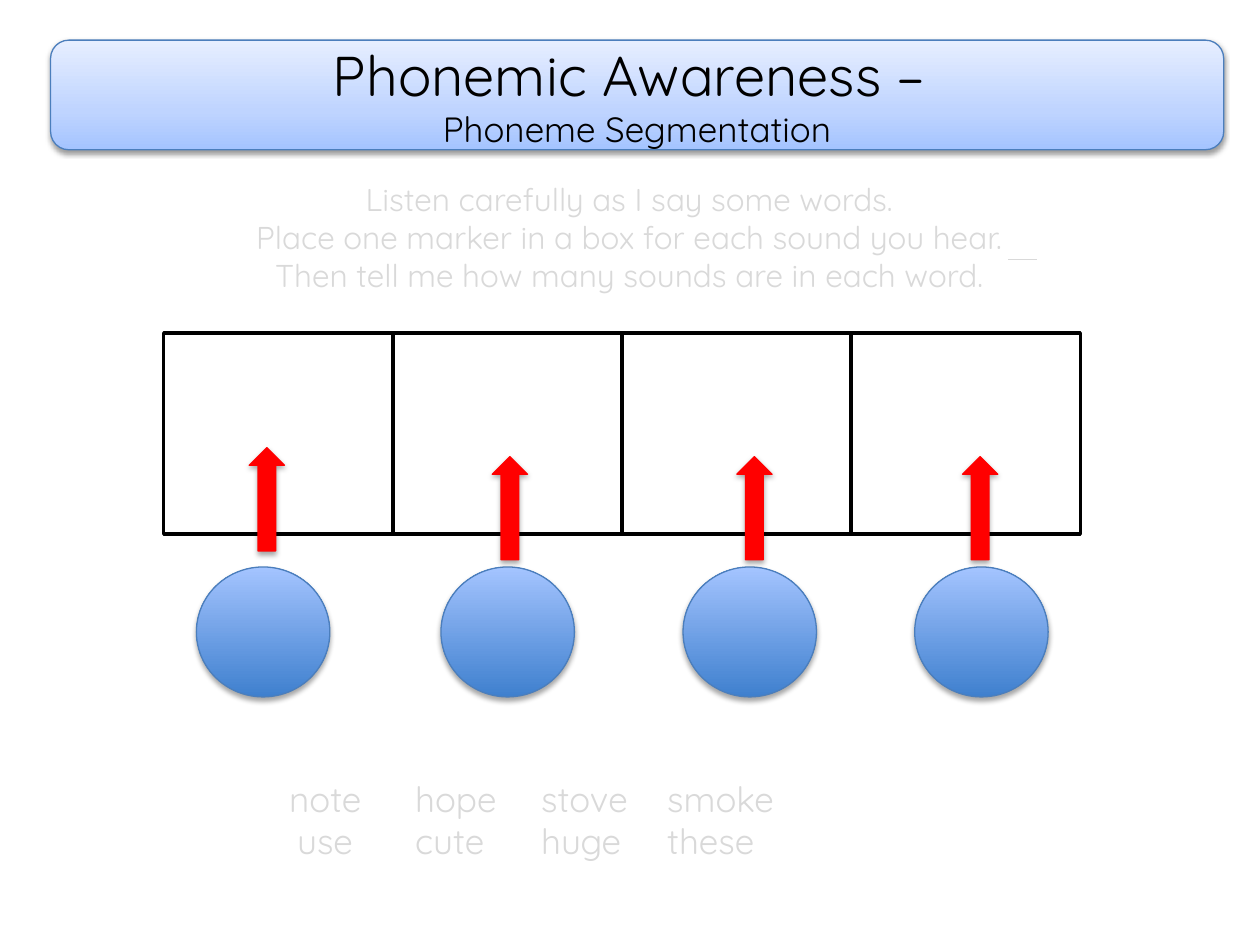
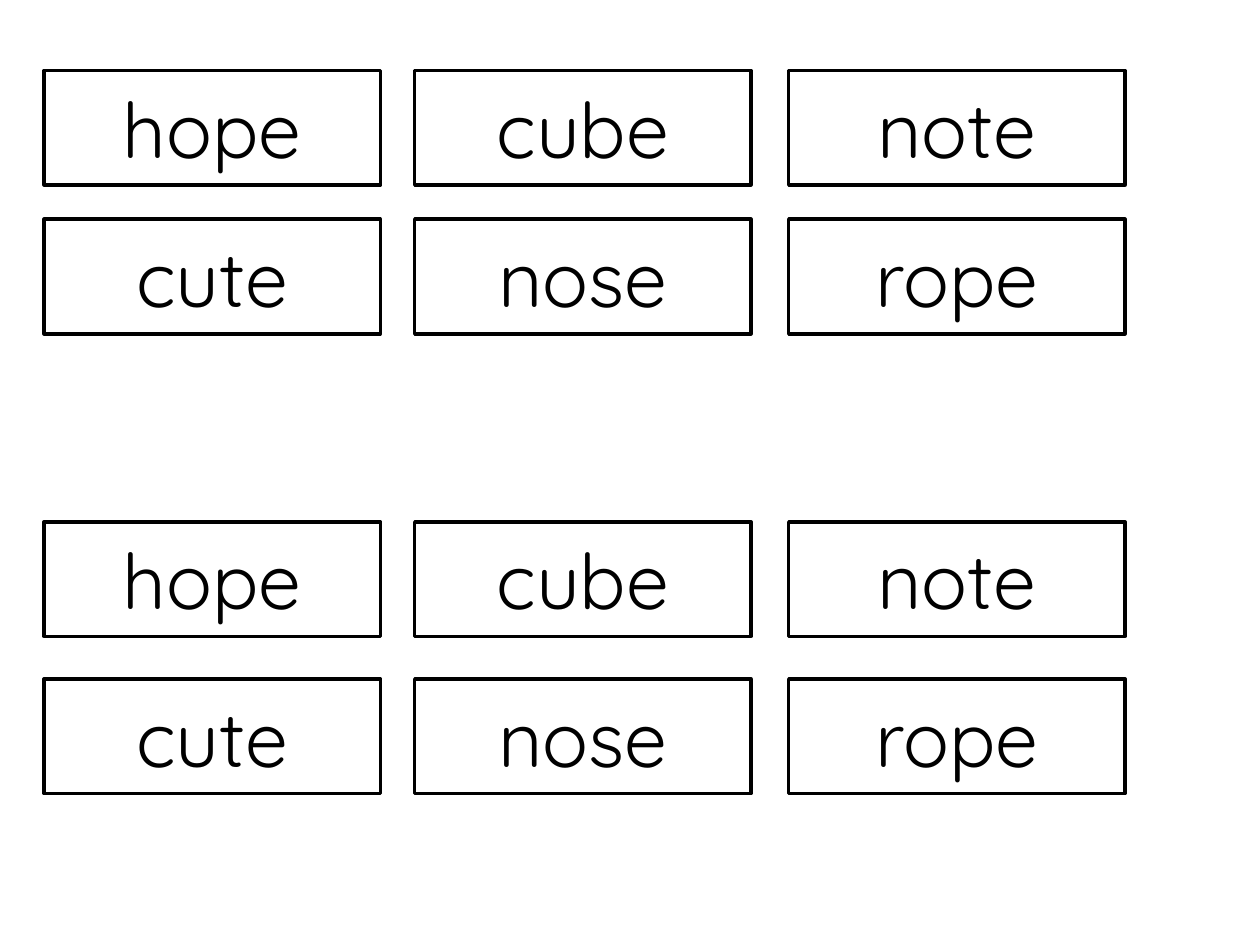
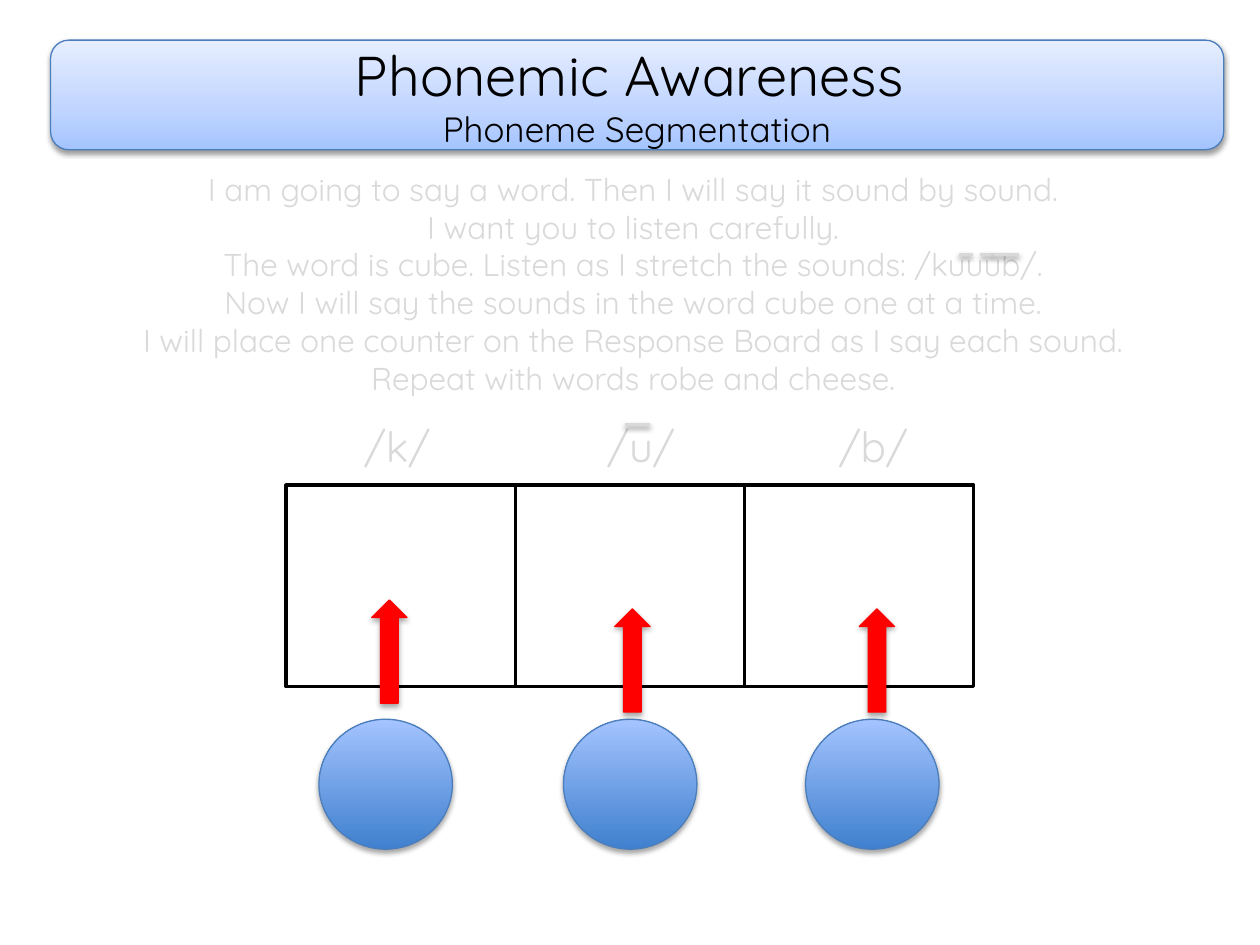
import copy

import pptx
import pptx.dml.color
import pptx.enum.shapes
import pptx.enum.text
import pptx.oxml
import pptx.oxml.ns
import pptx.util
from lxml import etree

Cm = pptx.util.Cm
Pt = pptx.util.Pt
RGBColor = pptx.dml.color.RGBColor
SHAPE = pptx.enum.shapes.MSO_SHAPE
ALIGN = pptx.enum.text.PP_ALIGN
qn = pptx.oxml.ns.qn

FONT = "Quicksand"
BLACK = RGBColor(0x00, 0x00, 0x00)
WHITE = RGBColor(0xFF, 0xFF, 0xFF)
RED = RGBColor(0xFF, 0x00, 0x00)
PALE_GRAY = RGBColor(0xD9, 0xD9, 0xD9)
EDGE_BLUE = RGBColor(0x4B, 0x7E, 0xBC)
DEEP_BLUE = RGBColor(0x3F, 0x80, 0xCE)
SKY_BLUE = RGBColor(0xA4, 0xC4, 0xFF)
MIST_BLUE = RGBColor(0xBF, 0xD4, 0xFF)
ICE_BLUE = RGBColor(0xE6, 0xEE, 0xFF)
BANNER_STOPS = [(0, SKY_BLUE), (0.35, MIST_BLUE), (1, ICE_BLUE)]
COUNTER_STOPS = [(0, DEEP_BLUE), (1, SKY_BLUE)]


def place(slide, preset, box, fill, edge, edge_width):
    shape = slide.shapes.add_shape(preset, *map(Cm, box))
    shape.shadow.inherit = False
    if isinstance(fill, list):
        shape.fill.gradient()
        shape.fill.gradient_angle = 90
        stop_list = shape._element.spPr.find(".//" + qn("a:gsLst"))
        for _ in fill[2:]:
            stop_list.append(copy.deepcopy(stop_list[0]))
        for stop, (position, color) in zip(shape.fill.gradient_stops, fill):
            stop.position = position
            stop.color.rgb = color
    else:
        shape.fill.solid()
        shape.fill.fore_color.rgb = fill
    shape.line.color.rgb = edge
    shape.line.width = Pt(edge_width)
    return shape


def write(shape, text, size, color, alignment=ALIGN.CENTER):
    frame = shape.text_frame
    frame.word_wrap = True
    frame.text = text
    for paragraph in frame.paragraphs:
        paragraph.alignment = alignment
        paragraph.font.name = FONT
        paragraph.font.size = Pt(size)
        paragraph.font.color.rgb = color
    return frame


deck = pptx.Presentation()
deck.slide_width = Cm(25.4)
deck.slide_height = Cm(19.05)
practice, cards, modeling = [deck.slides.add_slide(deck.slide_layouts[6]) for _ in range(3)]
shadowed = []

LESSONS = [
    (practice, "Phonemic Awareness – ", (0.33, 3.51, 24.71, 2.57), 3.3, 6.71, 4, [
        "Listen carefully as I say some words.",
        "Place one marker in a box for each sound you hear.",
        "Then tell me how many sounds are in each word.",
    ]),
    (modeling, "Phonemic Awareness ", (0.41, 3.3, 24.71, 4.88), 5.77, 9.78, 3, [
        "I am going to say a word. Then I will say it sound by sound.",
        "I want you to listen carefully.",
        "The word is cube. Listen as I stretch the sounds: /kuuub/.",
        "Now I will say the sounds in the word cube one at a time.",
        "I will place one counter on the Response Board as I say each sound.",
        "Repeat with words robe and cheese.",
    ]),
]
BOX_WIDTH, BOX_HEIGHT = 4.62, 4.06
COUNTER_OFFSETS = [0.66, 5.59, 10.47, 15.14]
ARROW_OFFSETS = [(1.04, 3.0), (5.94, 3.18), (10.87, 3.18), (15.42, 3.18)]

for slide, title, prompt_box, board_left, board_top, sound_count, prompt in LESSONS:
    banner = place(slide, SHAPE.ROUNDED_RECTANGLE, (1.02, 0.81, 23.65, 2.21), BANNER_STOPS, EDGE_BLUE, 0.75)
    heading = write(banner, title + "\nPhoneme Segmentation", 32, BLACK)
    heading.paragraphs[1].font.size = Pt(20)
    shadowed.append((banner, 38, 1.6))

    instructions = slide.shapes.add_textbox(*map(Cm, prompt_box))
    write(instructions, "\n".join(prompt), 18, PALE_GRAY)
    instructions.text_frame.auto_size = pptx.enum.text.MSO_AUTO_SIZE.SHAPE_TO_FIT_TEXT

    for index in range(sound_count):
        place(slide, SHAPE.RECTANGLE, (board_left + index * BOX_WIDTH, board_top, BOX_WIDTH, BOX_HEIGHT),
              WHITE, BLACK, 2)
    for offset in COUNTER_OFFSETS[:sound_count]:
        counter = place(slide, SHAPE.OVAL, (board_left + offset, board_top + 4.72, 2.69, 2.62),
                        COUNTER_STOPS, EDGE_BLUE, 0.75)
        shadowed.append((counter, 35, 1.8))
    for across, down in ARROW_OFFSETS[:sound_count]:
        arrow = place(slide, SHAPE.RIGHT_ARROW, (board_left + across, board_top + down, 2.08, 0.71),
                      RED, RED, 0.75)
        arrow.rotation = 270
        shadowed.append((arrow, 35, 1.8))

word_list = practice.shapes.add_textbox(Cm(0.33), Cm(15.54), Cm(24.71), Cm(1.96))
words = write(word_list, "note\thope\tstove\tsmoke\nuse\tcute\thuge\tthese", 20, PALE_GRAY, ALIGN.LEFT)
words.margin_left = Cm(5.5)
WORD_STOPS = [(0, [3.81, 7.62, 11.43]), (0.16, [3.84, 7.44, 11.46])]
for paragraph, (indent, stops) in zip(words.paragraphs, WORD_STOPS):
    properties = paragraph._p.get_or_add_pPr()
    properties.set("marL", "0")
    properties.set("indent", str(Cm(indent)))
    tab_list = etree.SubElement(properties, qn("a:tabLst"))
    properties.insert(0, tab_list)
    for stop in stops:
        etree.SubElement(tab_list, qn("a:tab"), pos=str(Cm(stop)), algn="l")
    default_run = properties.find(qn("a:defRPr"))
    if default_run is not None:
        properties.append(default_run)

CARD_WORDS = [["hope", "cube", "note"], ["cute", "nose", "rope"]]
for top, row in zip([1.42, 4.42, 10.52, 13.69], CARD_WORDS * 2):
    for left, word in zip([0.89, 8.36, 15.9], row):
        card = place(cards, SHAPE.RECTANGLE, (left, top, 6.78, 2.31), WHITE, BLACK, 2)
        write(card, word, 44, BLACK)

for left, sound in zip([7.09, 11.99, 16.66], ["/k/", "/u/", "/b/"]):
    label = modeling.shapes.add_textbox(Cm(left), Cm(8.36), Cm(2.24), Cm(1.27))
    write(label, sound, 24, PALE_GRAY, ALIGN.LEFT)

LONG_VOWEL_MARKS = [
    (practice, 20.32, 20.9, 5.23, 0.75),
    (modeling, 19.33, 19.61, 5.13, 2),
    (modeling, 19.76, 20.04, 5.13, 2),
    (modeling, 20.04, 20.55, 5.13, 2),
    (modeling, 12.6, 13.11, 8.56, 2),
]
for slide, start, end, height, width in LONG_VOWEL_MARKS:
    macron = slide.shapes.add_connector(pptx.enum.shapes.MSO_CONNECTOR.STRAIGHT,
                                        Cm(start), Cm(height), Cm(end), Cm(height))
    macron.line.color.rgb = PALE_GRAY
    macron.line.width = Pt(width)
    etree.SubElement(macron._element.spPr, qn("a:effectLst"))
    if slide is modeling:
        shadowed.append((macron, 38, 1.6))

for item, opacity, distance in shadowed:
    effects = item._element.spPr.find(qn("a:effectLst"))
    shadow = etree.SubElement(effects, qn("a:outerShdw"), blurRad=str(Pt(3.1)), dist=str(Pt(distance)),
                              dir="5400000", rotWithShape="0")
    shade = etree.SubElement(shadow, qn("a:srgbClr"), val=str(BLACK))
    etree.SubElement(shade, qn("a:alpha"), val=str(opacity * 1000))

deck.save("out.pptx")
